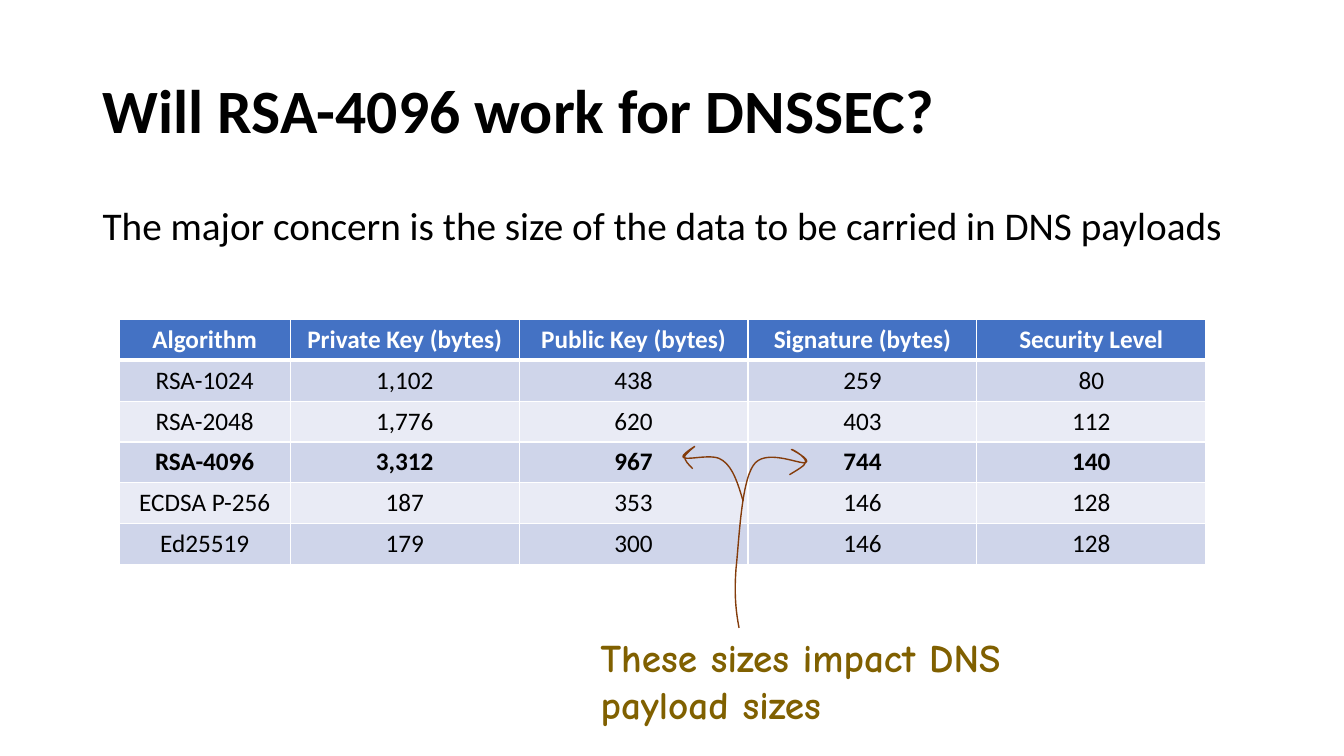
from lxml import etree
from pptx import Presentation
from pptx import util as u
from pptx.dml.color import RGBColor
from pptx.enum import text
from pptx.oxml.ns import qn
from pptx.util import Inches

COLORS = {
    "black": "000000", "white": "FFFFFF", "header": "4472C4",
    "band_dark": "CFD5EA", "band_light": "E9EBF5",
    "arrow": "843C0B", "note": "806000",
}
rgb = {name: RGBColor.from_string(value) for name, value in COLORS.items()}


def add_run(p, words, size, color, bold=False, font="Calibri"):
    r = p.add_run()
    r.text = words
    r.font.size = u.Pt(size)
    r.font.name = font
    r.font.bold = bold
    r.font.color.rgb = rgb[color]


def add_bottom_border(cell, color, points):
    line = etree.Element(qn("a:lnB"), w=str(u.Pt(points)))
    fill = etree.SubElement(line, qn("a:solidFill"))
    etree.SubElement(fill, qn("a:srgbClr"), val=COLORS[color])
    cell._tc.get_or_add_tcPr().insert(0, line)


prs = Presentation()
prs.slide_width, prs.slide_height = Inches(13.33), Inches(7.5)
s = prs.slides.add_slide(prs.slide_layouts[6])

# Title
tf = s.shapes.add_textbox(Inches(0.92), Inches(0.4), Inches(11.5), Inches(1.45)).text_frame
tf.word_wrap = True
tf.vertical_anchor = text.MSO_ANCHOR.MIDDLE
p = tf.paragraphs[0]
p.line_spacing = 0.9
add_run(p, "Will RSA-4096 work for DNSSEC?", 44, "black", bold=True)

# Main statement
tf = s.shapes.add_textbox(Inches(0.92), Inches(2), Inches(11.5), Inches(0.98)).text_frame
tf.word_wrap = True
p = tf.paragraphs[0]
p.line_spacing = 0.9
p.space_before = u.Pt(10)
add_run(p, "The major concern is the size of the data to be carried in DNS payloads", 28, "black")

# Key size table; the default table style supplies the thin white borders
rows = [
    ["Algorithm", "Private Key (bytes)", "Public Key (bytes)", "Signature (bytes)", "Security Level"],
    ["RSA-1024", "1,102", "438", "259", "80"],
    ["RSA-2048", "1,776", "620", "403", "112"],
    ["RSA-4096", "3,312", "967", "744", "140"],
    ["ECDSA P-256", "187", "353", "146", "128"],
    ["Ed25519", "179", "300", "146", "128"],
]
table = s.shapes.add_table(len(rows), len(rows[0]), Inches(1.18), Inches(3.17),
                           Inches(10.78), Inches(2.43)).table
for i, column in enumerate(table.columns):
    column.width = Inches(1.7 if i == 0 else 2.27)
for i, row in enumerate(rows):
    is_header = i == 0
    fill = "header" if is_header else "band_dark" if i % 2 else "band_light"
    for j, value in enumerate(row):
        cell = table.cell(i, j)
        cell.fill.solid()
        cell.fill.fore_color.rgb = rgb[fill]
        if is_header:
            add_bottom_border(cell, "white", 3)
        p = cell.text_frame.paragraphs[0]
        p.alignment = text.PP_ALIGN.CENTER
        add_run(p, value, 18, "white" if is_header else "black",
                bold=is_header or row[0] == "RSA-4096")

# Curved arrows to the signature and public key sizes:
# a start point, then two control points and an end point per curve
arrows = [
    ((7.33, 6.23), [
        ((7.3, 6.07), (7.28, 5.91), (7.3, 5.64)),
        ((7.33, 5.37), (7.35, 4.8), (7.47, 4.62)),
        ((7.58, 4.44), (7.93, 4.61), (7.99, 4.59)),
        ((8.05, 4.56), (7.85, 4.46), (7.85, 4.46)),
        ((7.85, 4.45), (7.99, 4.53), (7.99, 4.58)),
        ((7.99, 4.62), (7.91, 4.66), (7.83, 4.71)),
    ]),
    ((7.37, 4.97), [
        ((7.32, 4.8), (7.27, 4.64), (7.17, 4.57)),
        ((7.08, 4.49), (6.83, 4.57), (6.78, 4.54)),
        ((6.74, 4.52), (6.89, 4.43), (6.89, 4.43)),
        ((6.89, 4.43), (6.8, 4.5), (6.79, 4.53)),
        ((6.79, 4.57), (6.83, 4.61), (6.87, 4.65)),
    ]),
]
for (x, y), curves in arrows:
    builder = s.shapes.build_freeform(Inches(x), Inches(y))
    ends = [(Inches(cx), Inches(cy)) for _, _, (cx, cy) in curves]
    builder.add_line_segments(ends, close=False)
    sp = builder.convert_to_shape()
    sp.shadow.inherit = False
    sp.fill.background()
    sp.line.color.rgb = rgb["arrow"]
    sp.line.width = u.Pt(1)
    # Bend each straight segment into its cubic curve
    for segment, curve in zip(list(sp._element.iter(qn("a:lnTo"))), curves):
        bend = etree.Element(qn("a:cubicBezTo"))
        for cx, cy in curve:
            etree.SubElement(bend, qn("a:pt"), x=str(Inches(cx) - sp.left),
                             y=str(Inches(cy) - sp.top))
        segment.getparent().replace(segment, bend)

# Note under the table
tf = s.shapes.add_textbox(Inches(5.86), Inches(6.23), Inches(4.52), Inches(0.57)).text_frame
tf.word_wrap = True
tf.auto_size = text.MSO_AUTO_SIZE.SHAPE_TO_FIT_TEXT
add_run(tf.paragraphs[0], "These sizes impact DNS payload sizes", 28, "note",
        bold=True, font="Comic Neue")

prs.save("out.pptx")
